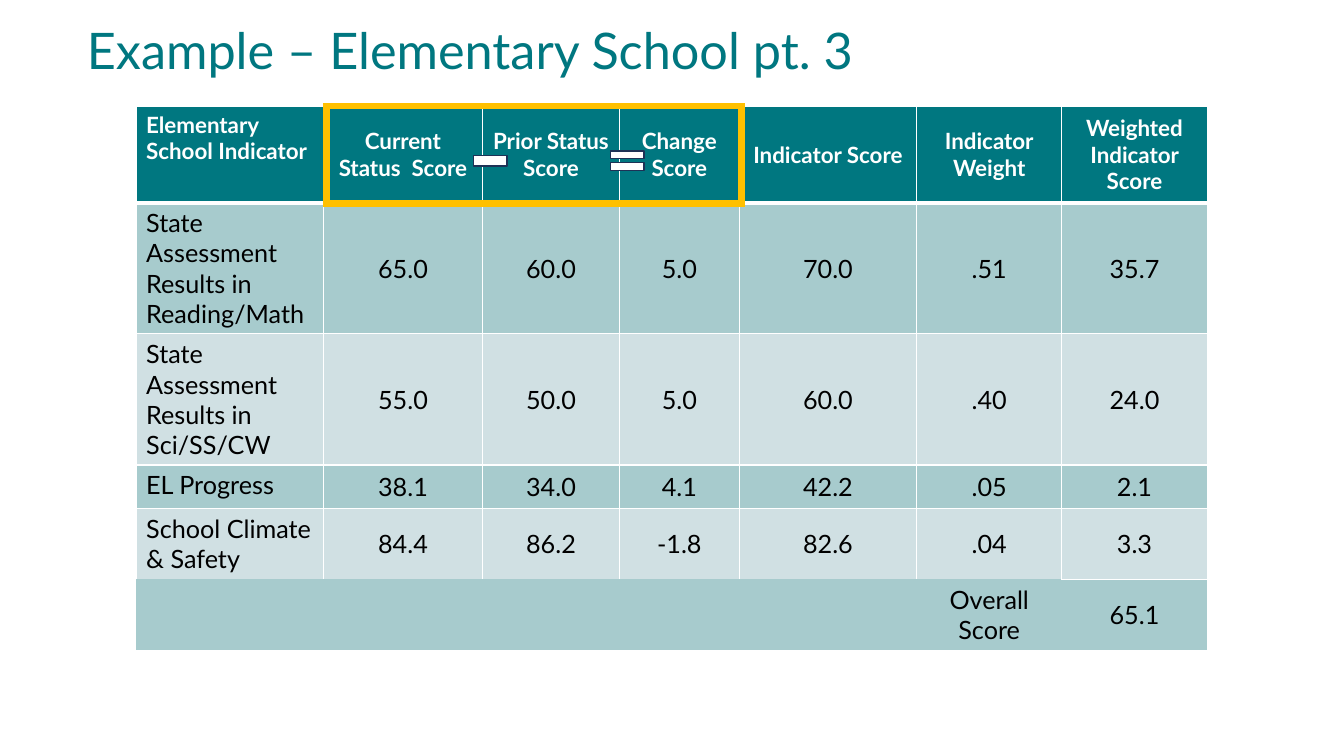
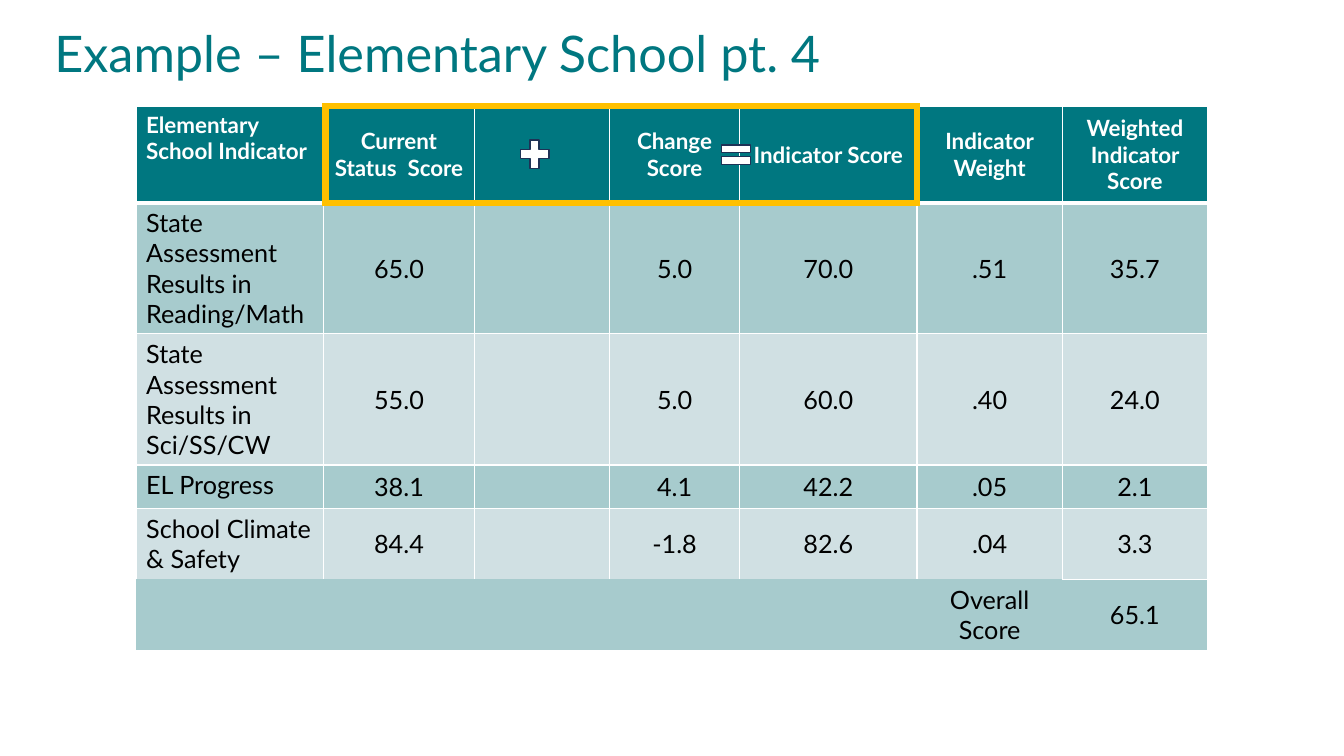
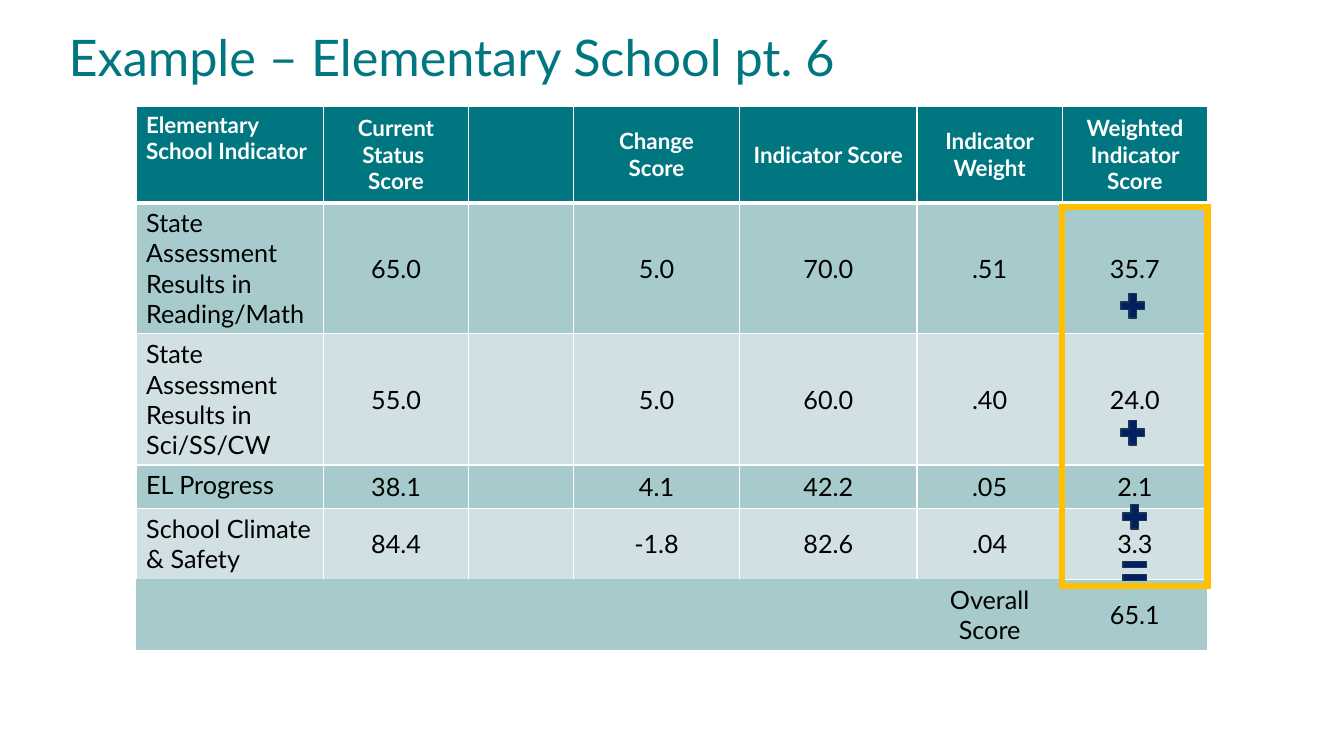
import pptx
import pptx.util
import pptx.dml.color
import pptx.enum.shapes
import pptx.enum.text
import pptx.oxml.ns
from lxml import etree

Cm = pptx.util.Cm
Pt = pptx.util.Pt
RGBColor = pptx.dml.color.RGBColor
SHAPE = pptx.enum.shapes.MSO_SHAPE
ALIGN = pptx.enum.text.PP_ALIGN
ANCHOR = pptx.enum.text.MSO_ANCHOR
qn = pptx.oxml.ns.qn

# Shared style
FONT = "Lato"
TEAL = RGBColor(0x00, 0x77, 0x80)
BAND_DARK = RGBColor(0xA7, 0xCB, 0xCD)
BAND_LIGHT = RGBColor(0xD0, 0xE0, 0xE3)
WHITE = RGBColor(0xFF, 0xFF, 0xFF)
BLACK = RGBColor(0x00, 0x00, 0x00)
GOLD = RGBColor(0xFF, 0xC0, 0x00)
NAVY = RGBColor(0x00, 0x20, 0x60)
OUTLINE = RGBColor(0x1E, 0x32, 0x56)

# Table content and grid (cm)
TABLE_LEFT, TABLE_TOP = 3.43, 2.67
LABEL_WIDTH = 4.72
SCORE_WIDTHS = [4.47, 3.66, 3.66]
ROW_HEIGHTS = [2.44, 3.3, 3.3, 1.09, 1.79, 1.79]
PRIOR_COLUMN = 2
ROWS = [
    ["Elementary School Indicator", "Current\nStatus  Score", "Prior Status Score",
     "Change\nScore", "Indicator Score", "Indicator\nWeight", "Weighted Indicator Score"],
    ["State Assessment Results in Reading/Math", "65.0", "60.0", "5.0", "70.0", ".51", "35.7"],
    ["State Assessment Results in Sci/SS/CW", "55.0", "50.0", "5.0", "60.0", ".40", "24.0"],
    ["EL Progress", "38.1", "34.0", "4.1", "42.2", ".05", "2.1"],
    ["School Climate & Safety", "84.4", "86.2", "-1.8", "82.6", ".04", "3.3"],
    ["", "", "", "", "", "Overall Score", "65.1"],
]
LAST_ROW, LAST_COLUMN = len(ROWS) - 1, len(ROWS[0]) - 1


def set_font(para, size, color, bold=False):
    para.font.name = FONT
    para.font.size = Pt(size)
    para.font.color.rgb = color
    para.font.bold = bold


def add_title(page, text, left, top):
    box = page.shapes.add_textbox(Cm(left), Cm(top), Cm(23.4), Cm(2.1))
    frame = box.text_frame
    frame.word_wrap = True
    frame.vertical_anchor = ANCHOR.MIDDLE
    frame.margin_left = frame.margin_right = Cm(0.18)
    frame.margin_top = frame.margin_bottom = Cm(0.1)
    frame.text = text
    para = frame.paragraphs[0]
    para.line_spacing = 0.9
    set_font(para, 36, TEAL)


def border_widths(row, column):
    """Points for the left, right, top and bottom border; 0 hides it."""
    if row == LAST_ROW:
        return (0, 1, 1, 1) if column == LAST_COLUMN else (0, 0, 0, 0)
    top = 3 if row == 1 else 1
    bottom = 3 if row == 0 else 1
    if row == LAST_ROW - 1 and column < LAST_COLUMN:
        bottom = 0
    return 1, 1, top, bottom


def set_borders(cell, widths):
    properties = cell._tc.get_or_add_tcPr()
    for index, (side, width) in enumerate(zip("LRTB", widths)):
        line = etree.Element(qn(f"a:ln{side}"), w=str(Pt(width)))
        if width:
            fill = etree.SubElement(line, qn("a:solidFill"))
            etree.SubElement(fill, qn("a:srgbClr"), val=str(WHITE))
        else:
            etree.SubElement(line, qn("a:noFill"))
        properties.insert(index, line)


def fill_cell(cell, text, row, column):
    header = row == 0
    at_top = column == 0 or (row == LAST_ROW and column < LAST_COLUMN)
    cell.text = text
    cell.vertical_anchor = ANCHOR.TOP if at_top else ANCHOR.MIDDLE
    for para in cell.text_frame.paragraphs:
        para.alignment = ALIGN.LEFT if column == 0 else ALIGN.CENTER
        set_font(para, 16 if header else 18, WHITE if header else BLACK, header)
    cell.fill.solid()
    cell.fill.fore_color.rgb = TEAL if header else (BAND_LIGHT, BAND_DARK)[row % 2]
    set_borders(cell, border_widths(row, column))


def add_score_table(page, status_widths, show_prior):
    widths = [LABEL_WIDTH, *status_widths, *SCORE_WIDTHS]
    table = page.shapes.add_table(
        len(ROWS), len(widths), Cm(TABLE_LEFT), Cm(TABLE_TOP),
        Cm(sum(widths)), Cm(sum(ROW_HEIGHTS))).table
    table.horz_banding = False
    for column, width in zip(table.columns, widths):
        column.width = Cm(width)
    for row, height in zip(table.rows, ROW_HEIGHTS):
        row.height = Cm(height)
    for row, texts in enumerate(ROWS):
        for column, text in enumerate(texts):
            hidden = column == PRIOR_COLUMN and not show_prior
            fill_cell(table.cell(row, column), "" if hidden else text, row, column)


def add_highlight(page, left, top, width, height):
    frame = page.shapes.add_shape(SHAPE.RECTANGLE, Cm(left), Cm(top), Cm(width), Cm(height))
    frame.shadow.inherit = False
    frame.fill.background()
    frame.line.color.rgb = GOLD
    frame.line.width = Pt(4.5)
    etree.SubElement(frame._element.spPr.find(qn("a:ln")), qn("a:miter"), lim="800000")


def add_symbol(page, kind, color, left, top, width, height):
    symbol = page.shapes.add_shape(kind, Cm(left), Cm(top), Cm(width), Cm(height))
    symbol.shadow.inherit = False
    symbol.fill.solid()
    symbol.fill.fore_color.rgb = color
    symbol.line.color.rgb = OUTLINE
    symbol.line.width = Pt(1)
    return symbol


def add_example(deck, part, title_at, status_widths, highlight, show_prior=False):
    page = deck.slides.add_slide(deck.slide_layouts[6])
    add_title(page, f"Example – Elementary School pt. {part}", *title_at)
    add_score_table(page, status_widths, show_prior)
    add_highlight(page, *highlight)
    return page


def main():
    deck = pptx.Presentation()
    deck.slide_width, deck.slide_height = Cm(33.87), Cm(19.05)

    # Current status minus prior status equals change
    page = add_example(deck, 3, (2.01, 0.28), [4.01, 3.45, 3.02],
                       (8.23, 2.67, 10.46, 2.46), show_prior=True)
    add_symbol(page, SHAPE.MATH_MINUS, WHITE, 11.79, 3.48, 1.14, 1.14)
    add_symbol(page, SHAPE.MATH_EQUAL, WHITE, 15.24, 3.63, 1.14, 0.84)

    # Current status plus change equals indicator score
    page = add_example(deck, 4, (1.19, 0.36), [3.81, 3.4, 3.28],
                       (8.2, 2.67, 14.91, 2.44))
    add_symbol(page, SHAPE.MATH_PLUS, WHITE, 12.98, 3.4, 0.99, 0.97)
    add_symbol(page, SHAPE.MATH_EQUAL, WHITE, 18.06, 3.48, 0.99, 0.84)

    # Weighted scores add up to the overall score
    page = add_example(deck, 6, (1.55, 0.47), [3.66, 2.64, 4.19],
                       (26.77, 5.21, 3.66, 9.55))
    for left, top in [(28.14, 7.29), (28.14, 10.49), (28.19, 12.6)]:
        add_symbol(page, SHAPE.MATH_PLUS, NAVY, left, top, 0.81, 0.84)
    equal = add_symbol(page, SHAPE.MATH_EQUAL, NAVY, 28.19, 14.07, 0.81, 0.64)
    equal.adjustments[0] = 0.24
    equal.adjustments[1] = 0.27

    deck.save("out.pptx")


if __name__ == "__main__":
    main()
